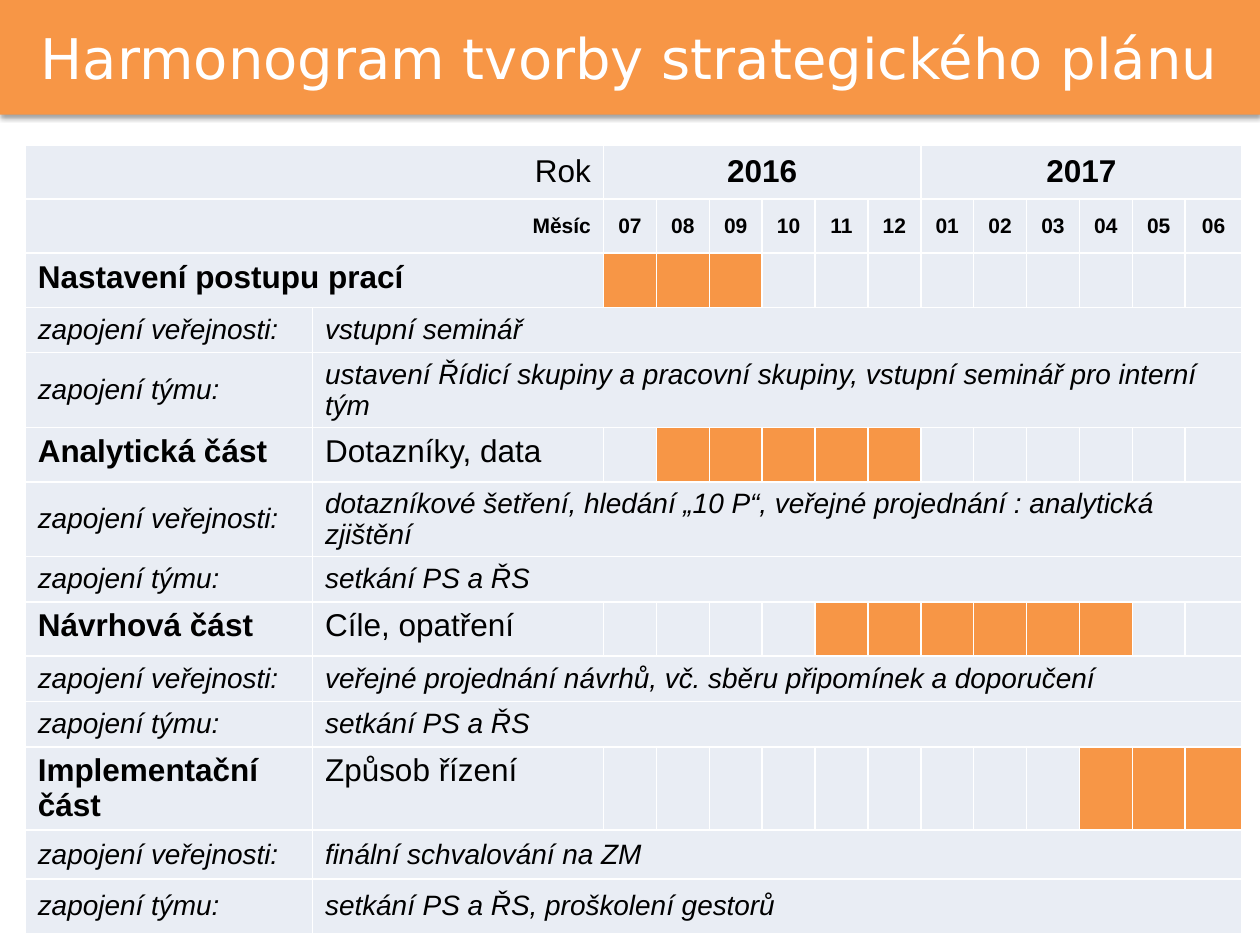
"""Build a one-slide Gantt-style schedule for a strategic plan."""
from lxml.etree import SubElement
from pptx import Presentation
from pptx.dml.color import RGBColor
from pptx.enum.shapes import MSO_SHAPE
from pptx.enum.text import MSO_ANCHOR as ANCHOR, PP_ALIGN as ALIGN
from pptx.oxml import parse_xml
from pptx.oxml.ns import nsdecls, qn
from pptx.util import Inches, Pt

COLORS = {"accent": "F79646", "cell": "E9EDF4", "white": "FFFFFF", "black": "000000"}
COL_WIDTHS = [2.28, 2.31] + [0.42] * 11 + [0.45]
ROW_HEIGHTS = [0.43, 0.43, 0.43, 0.36, 0.36, 0.43, 0.36, 0.36, 0.43, 0.36, 0.36,
               0.43, 0.39, 0.43]
FIRST_MONTH_COL = 2
MONTHS = ["07", "08", "09", "10", "11", "12", "01", "02", "03", "04", "05", "06"]
PHASES = [
    ("Nastavení postupu prací", None, range(0, 3), "vstupní seminář",
     "ustavení Řídicí skupiny a pracovní skupiny, vstupní seminář pro interní tým"),
    ("Analytická část", "Dotazníky, data", range(1, 6),
     "dotazníkové šetření, hledání „10 P“, veřejné projednání : analytická zjištění",
     "setkání PS a ŘS"),
    ("Návrhová část", "Cíle, opatření", range(4, 10),
     "veřejné projednání návrhů, vč. sběru připomínek a doporučení", "setkání PS a ŘS"),
    ("Implementační část", "Způsob řízení", range(9, 12),
     "finální schvalování na ZM", "setkání PS a ŘS, proškolení gestorů"),
]


def rgb(name):
    return RGBColor.from_string(COLORS[name])


def write_text(tf, text, size=18, bold=False, italic=False, align=ALIGN.LEFT,
               color="black", font="Arial"):
    p = tf.paragraphs[0]
    p.alignment = align
    r = p.add_run()
    r.text = text
    r.font.size, r.font.bold, r.font.italic = Pt(size), bold, italic
    r.font.name = font
    r.font.color.rgb = rgb(color)


def add_title(slide, text):
    sp = slide.shapes.add_shape(MSO_SHAPE.RECTANGLE, 0, 0, Inches(10), Inches(0.91))
    sp.fill.solid()
    sp.fill.fore_color.rgb = rgb("accent")
    sp.line.fill.background()
    sp.shadow.inherit = False
    effects = sp.element.spPr.find(qn("a:effectLst"))
    effects.append(parse_xml(
        f'<a:outerShdw {nsdecls("a")} blurRad="{Pt(3.1)}" dist="{Pt(1.6)}" '
        f'dir="5400000" rotWithShape="0"><a:srgbClr val="{COLORS["black"]}">'
        '<a:alpha val="38000"/></a:srgbClr></a:outerShdw>'))
    tf = sp.text_frame
    tf.word_wrap = True
    tf.vertical_anchor = ANCHOR.MIDDLE
    write_text(tf, text, size=32, align=ALIGN.CENTER, color="white", font="DejaVu Sans")


def style_cell(cell):
    tcPr = cell._tc.get_or_add_tcPr()
    for side in ("lnL", "lnR", "lnT", "lnB"):
        ln = SubElement(tcPr, qn(f"a:{side}"), w=str(Pt(1)))
        fill = SubElement(ln, qn("a:solidFill"))
        SubElement(fill, qn("a:srgbClr"), val=COLORS["white"])
    cell.fill.solid()
    cell.fill.fore_color.rgb = rgb("cell")


def add_grid(slide):
    table = slide.shapes.add_table(
        len(ROW_HEIGHTS), len(COL_WIDTHS), Inches(0.2), Inches(1.15),
        Inches(sum(COL_WIDTHS)), Inches(sum(ROW_HEIGHTS))).table
    for col, width in zip(table.columns, COL_WIDTHS):
        col.width = Inches(width)
    for row, height in zip(table.rows, ROW_HEIGHTS):
        row.height = Inches(height)
    for cell in table.iter_cells():
        style_cell(cell)
    return table


def put(table, row, col, text, span=1, anchor=ANCHOR.MIDDLE, **fmt):
    cell = table.cell(row, col)
    if span > 1:
        cell.merge(table.cell(row, col + span - 1))
    cell.vertical_anchor = anchor
    write_text(cell.text_frame, text, **fmt)


def fill_header(table):
    put(table, 0, 0, "Rok", span=2, align=ALIGN.RIGHT)
    for i, year in enumerate(("2016", "2017")):
        put(table, 0, FIRST_MONTH_COL + 6 * i, year, span=6, bold=True, align=ALIGN.CENTER)
    put(table, 1, 0, "Měsíc", span=2, size=12, bold=True, align=ALIGN.RIGHT)
    for col, month in enumerate(MONTHS, FIRST_MONTH_COL):
        put(table, 1, col, month, size=12, bold=True, align=ALIGN.CENTER)


def fill_phase(table, row, name, topic, active, public, team):
    put(table, row, 0, name, span=1 if topic else 2, anchor=ANCHOR.TOP, bold=True)
    if topic:
        put(table, row, 1, topic, anchor=ANCHOR.TOP)
    for month in active:
        table.cell(row, FIRST_MONTH_COL + month).fill.fore_color.rgb = rgb("accent")
    details = (("zapojení veřejnosti:", public), ("zapojení týmu:", team))
    for r, (label, text) in enumerate(details, row + 1):
        put(table, r, 0, label, size=16, italic=True)
        put(table, r, 1, text, span=len(COL_WIDTHS) - 1, size=16, italic=True)


def main():
    prs = Presentation()
    prs.slide_width, prs.slide_height = Inches(10), Inches(7.5)
    slide = prs.slides.add_slide(prs.slide_layouts[6])
    add_title(slide, "Harmonogram tvorby strategického plánu")
    table = add_grid(slide)
    fill_header(table)
    for i, phase in enumerate(PHASES):
        fill_phase(table, 2 + 3 * i, *phase)
    prs.save("out.pptx")


if __name__ == "__main__":
    main()
